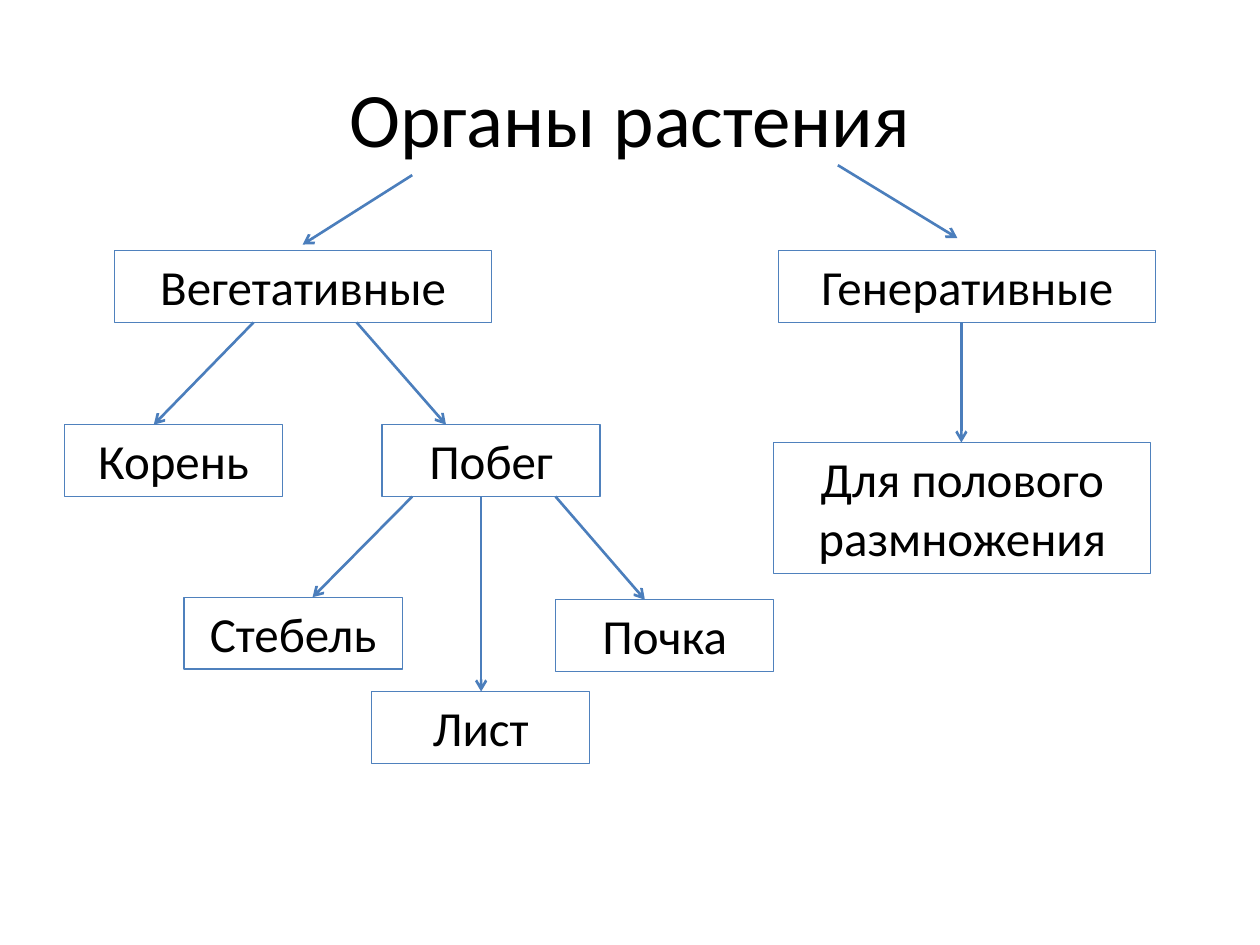
"""Build a slide with a tree diagram of plant organs."""
from lxml import etree
from pptx import Presentation
from pptx import util as u
from pptx.dml.color import RGBColor
from pptx.enum import shapes, text
from pptx.oxml.ns import qn

BLACK = RGBColor(0x00, 0x00, 0x00)
BORDER = RGBColor(0x4F, 0x81, 0xBD)
ARROW = RGBColor(0x4B, 0x7E, 0xBC)

TITLE = "Органы растения"
TITLE_AREA = (1.27, 0.76, 22.86, 3.18)
WIDE, NARROW = 7.6, 4.4
SINGLE, DOUBLE = 1.45, 2.64

ORGANS = {
    "Вегетативные": (2.31, 5.05, WIDE, SINGLE),
    "Генеративные": (15.7, 5.05, WIDE, SINGLE),
    "Корень": (1.3, 8.56, NARROW, SINGLE),
    "Побег": (7.7, 8.56, NARROW, SINGLE),
    "Для полового размножения": (15.6, 8.92, WIDE, DOUBLE),
    "Стебель": (3.71, 12.04, NARROW, SINGLE),
    "Лист": (7.49, 13.94, NARROW, SINGLE),
    "Почка": (11.2, 12.09, NARROW, SINGLE),
}
TITLE_ARROWS = [(8.31, 3.53, 6.1, 4.93), (16.89, 3.33, 19.3, 4.8)]
LINKS = [
    ("Вегетативные", "Корень", 5.11, 3.1),
    ("Вегетативные", "Побег", 7.19, 8.99),
    ("Генеративные", "Для полового размножения", 19.38, 19.38),
    ("Побег", "Почка", 11.2, 13),
    ("Побег", "Стебель", 8.31, 6.3),
    ("Побег", "Лист", 9.7, 9.7),
]


def to_cm(values):
    return [u.Cm(value) for value in values]


def write(frame, words, size, **frame_format):
    for name, value in {"word_wrap": True, **frame_format}.items():
        setattr(frame, name, value)
    para = frame.paragraphs[0]
    para.alignment = text.PP_ALIGN.CENTER
    span = para.add_run()
    span.text = words
    for name, value in {"name": "Calibri", "size": u.Pt(size)}.items():
        setattr(span.font, name, value)
    span.font.color.rgb = BLACK


def add_title(page):
    title = page.shapes.title
    for name, value in zip(("left", "top", "width", "height"), to_cm(TITLE_AREA)):
        setattr(title, name, value)
    write(title.text_frame, TITLE, 44, vertical_anchor=text.MSO_ANCHOR.MIDDLE)


def add_organ(page, words, area):
    box = page.shapes.add_textbox(*to_cm(area))
    box.line.color.rgb = BORDER
    box.line.width = u.Pt(0.75)
    write(box.text_frame, words, 28, auto_size=text.MSO_AUTO_SIZE.SHAPE_TO_FIT_TEXT)


def add_arrow(page, points):
    arrow = page.shapes.add_connector(shapes.MSO_CONNECTOR.STRAIGHT, *to_cm(points))
    arrow.line.color.rgb = ARROW
    arrow.line.width = u.Pt(1.5)
    etree.SubElement(arrow.line._get_or_add_ln(), qn("a:tailEnd"), type="arrow")
    etree.SubElement(arrow._element.spPr, qn("a:effectLst"))


def link_points(parent, child, start, end):
    _, top, _, height = ORGANS[parent]
    return start, top + height, end, ORGANS[child][1]


def main():
    deck = Presentation()
    deck.slide_width, deck.slide_height = to_cm((25.4, 19.05))
    page = deck.slides.add_slide(deck.slide_layouts[5])
    add_title(page)
    for words, area in ORGANS.items():
        add_organ(page, words, area)
    for points in TITLE_ARROWS + [link_points(*link) for link in LINKS]:
        add_arrow(page, points)
    deck.save("out.pptx")


if __name__ == "__main__":
    main()
